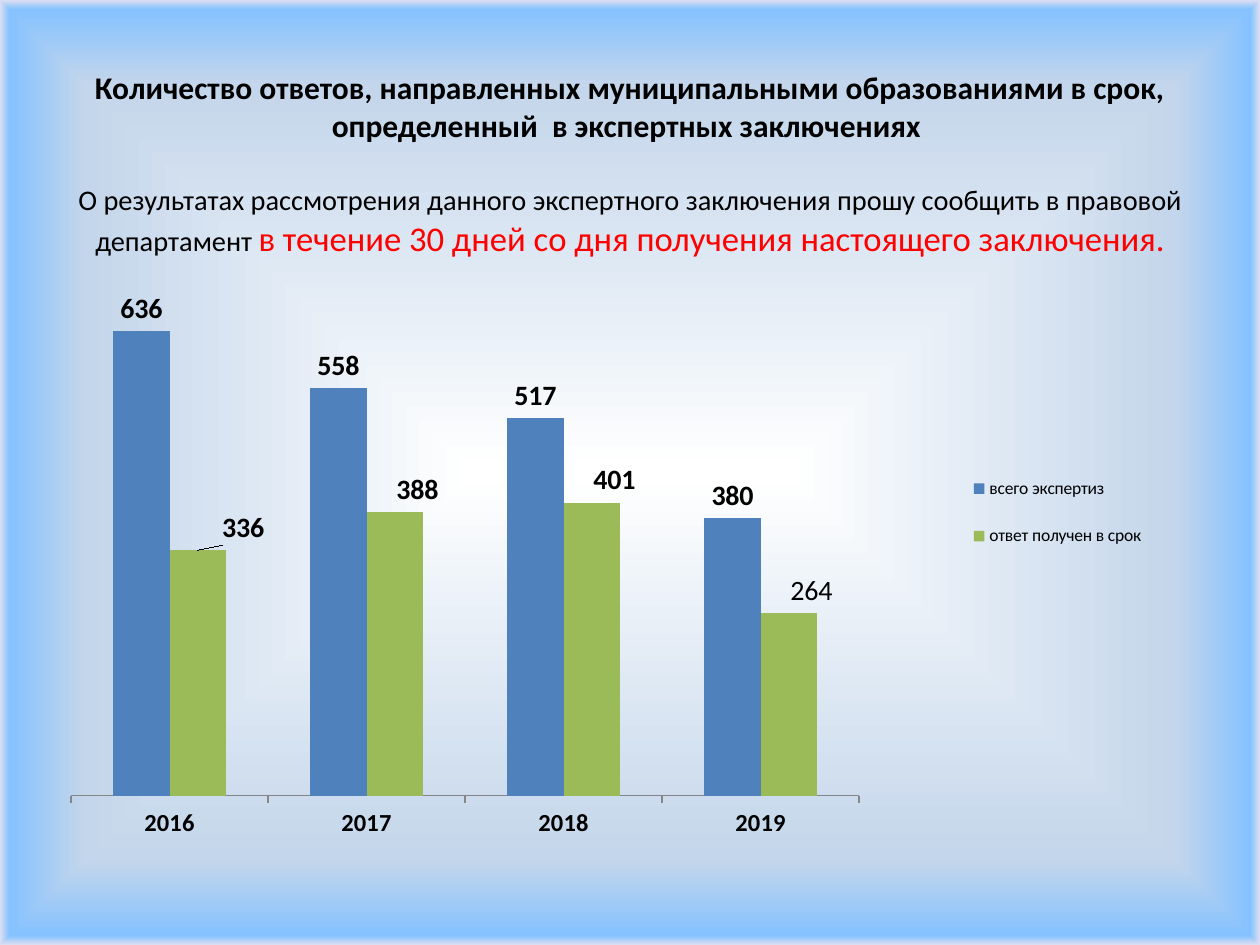
from pptx import Presentation
from pptx.chart.data import CategoryChartData
from pptx.dml.color import RGBColor
from pptx.enum.chart import XL_CHART_TYPE, XL_LABEL_POSITION, XL_LEGEND_POSITION, XL_TICK_MARK
from pptx.enum.text import MSO_ANCHOR, PP_ALIGN
from pptx.oxml import parse_xml
from pptx.oxml.ns import nsdecls, qn
from pptx.util import Cm, Pt


def paint(code):
    return RGBColor.from_string(code)


def place(x, y, w=None, h=None, inner=False):
    parts = ['<c:layoutTarget val="inner"/>'] if inner else []
    if w is not None:
        parts += ['<c:xMode val="edge"/>', '<c:yMode val="edge"/>']
    pairs = zip("xywh", (x, y, w, h))
    parts += [f'<c:{key} val="{val}"/>' for key, val in pairs if val is not None]
    return parse_xml(f'<c:layout {nsdecls("c")}><c:manualLayout>'
                     f'{"".join(parts)}</c:manualLayout></c:layout>')


class Deck:
    """Holds the style and the current slide."""

    face, ink, red, axis = "Calibri", "000000", "FF0000", "868686"

    def __init__(self):
        self.show = Presentation()
        self.show.slide_width, self.show.slide_height = Cm(25.4), Cm(19.05)
        self.slide = self.show.slides.add_slide(self.show.slide_layouts[6])

    def font(self, font, size, bold=False, color=None):
        font.name, font.size, font.bold = self.face, Pt(size), bold
        font.color.rgb = paint(color or self.ink)

    def back(self, stops):
        self.slide.background.fill.gradient()
        old = next(self.slide.element.iter(qn("a:gradFill")))
        marks = "".join(f'<a:gs pos="{pos * 1000}"><a:srgbClr val="{code}"/></a:gs>'
                        for pos, code in stops)
        new = parse_xml(
            f'<a:gradFill {nsdecls("a")} rotWithShape="1"><a:gsLst>{marks}</a:gsLst>'
            '<a:path path="shape"><a:fillToRect l="50000" t="50000" r="50000" b="50000"/>'
            '</a:path></a:gradFill>')
        old.getparent().replace(old, new)

    def text(self, box, paras, gap):
        frame = self.slide.shapes.add_textbox(*map(Cm, box)).text_frame
        frame.word_wrap, frame.vertical_anchor = True, MSO_ANCHOR.BOTTOM
        for num, runs in enumerate(paras):
            para = frame.add_paragraph() if num else frame.paragraphs[0]
            para.alignment = PP_ALIGN.CENTER
            para.space_before = Pt(gap if num else 0)
            for words, *style in runs:
                run = para.add_run()
                run.text = words
                self.font(run.font, *style)

    def chart(self, box, cats, rows, top):
        data = CategoryChartData()
        data.categories = cats
        for name, vals, *rest in rows:
            data.add_series(name, vals)
        chart = self.slide.shapes.add_chart(
            XL_CHART_TYPE.COLUMN_CLUSTERED, *map(Cm, box), data).chart
        self.font(chart.font, 10)
        chart.has_title = False
        self.axes(chart, top)
        self.key(chart)
        plot = chart.plots[0]
        plot.gap_width, plot.overlap, plot.vary_by_categories = 150, 0, False
        for line, (name, vals, code, shifts, notes) in zip(plot.series, rows):
            line.format.fill.solid()
            line.format.fill.fore_color.rgb = paint(code)
            self.labels(line, shifts, notes)
        return chart

    def axes(self, chart, top):
        side, base = chart.value_axis, chart.category_axis
        side.minimum_scale, side.maximum_scale = 0, top
        side.has_major_gridlines = side.visible = False
        base.major_tick_mark = XL_TICK_MARK.OUTSIDE
        base.format.line.color.rgb = paint(self.axis)
        self.font(base.tick_labels.font, 14, True)
        area = next(chart.element.iter(qn("c:plotArea")))
        for old in area.findall(qn("c:layout")):
            area.remove(old)
        area.insert(0, place(0.015, 0.034, 0.695, 0.877, inner=True))

    def key(self, chart):
        chart.has_legend = True
        legend = chart.legend
        legend.position, legend.include_in_layout = XL_LEGEND_POSITION.RIGHT, False
        self.font(legend.font, 10)
        node = next(chart.element.iter(qn("c:legend")))
        for old in node.findall(qn("c:layout")):
            node.remove(old)
        node.find(qn("c:legendPos")).addnext(place(0.78, 0.32, 0.21, 0.21))

    def labels(self, line, shifts, notes):
        tags = line.data_labels
        tags.show_value, tags.position = True, XL_LABEL_POSITION.OUTSIDE_END
        self.font(tags.font, 16, True)
        for num, shift in enumerate(shifts):
            tag = line.points[num].data_label
            if num in notes:
                tag.text_frame.text = notes[num]
                self.font(tag.text_frame.paragraphs[0].runs[0].font, 16)
            else:
                self.font(tag.font, 16, True)
            tag.position = XL_LABEL_POSITION.OUTSIDE_END
        nodes = tags._element.findall(qn("c:dLbl"))
        for node, shift in zip(nodes, shifts):
            node.find(qn("c:idx")).addnext(place(shift, 0))


def main():
    deck = Deck()
    deck.back([(0, "FFFFFF"), (82, "C4D6EB"), (98, "85C2FF"),
               (100, "DEDFF2"), (100, "FFEBFA")])
    deck.text((1.27, 0.76, 22.86, 4.57), [
        [("Количество ответов, направленных муниципальными образованиями в срок, "
          "определенный  в экспертных заключениях ", 18, True)],
        [("О результатах рассмотрения данного экспертного заключения прошу "
          "сообщить в правовой департамент ", 16.2),
         ("в течение 30 дней со дня получения настоящего заключения.",
          19.8, False, deck.red)],
    ], 22)
    deck.chart((1.09, 5.33, 22.86, 11.76), ["2016", "2017", "2018", "2019"], [
        ("всего экспертиз", (636, 558, 517, 380), "4F81BD", (), {}),
        ("ответ получен в срок", (336, 388, 401, 250), "9BBB59",
         (0.04, 0.02, 0.02, 0.02), {3: "264"}),
    ], 700)
    deck.show.save("out.pptx")


if __name__ == "__main__":
    main()
